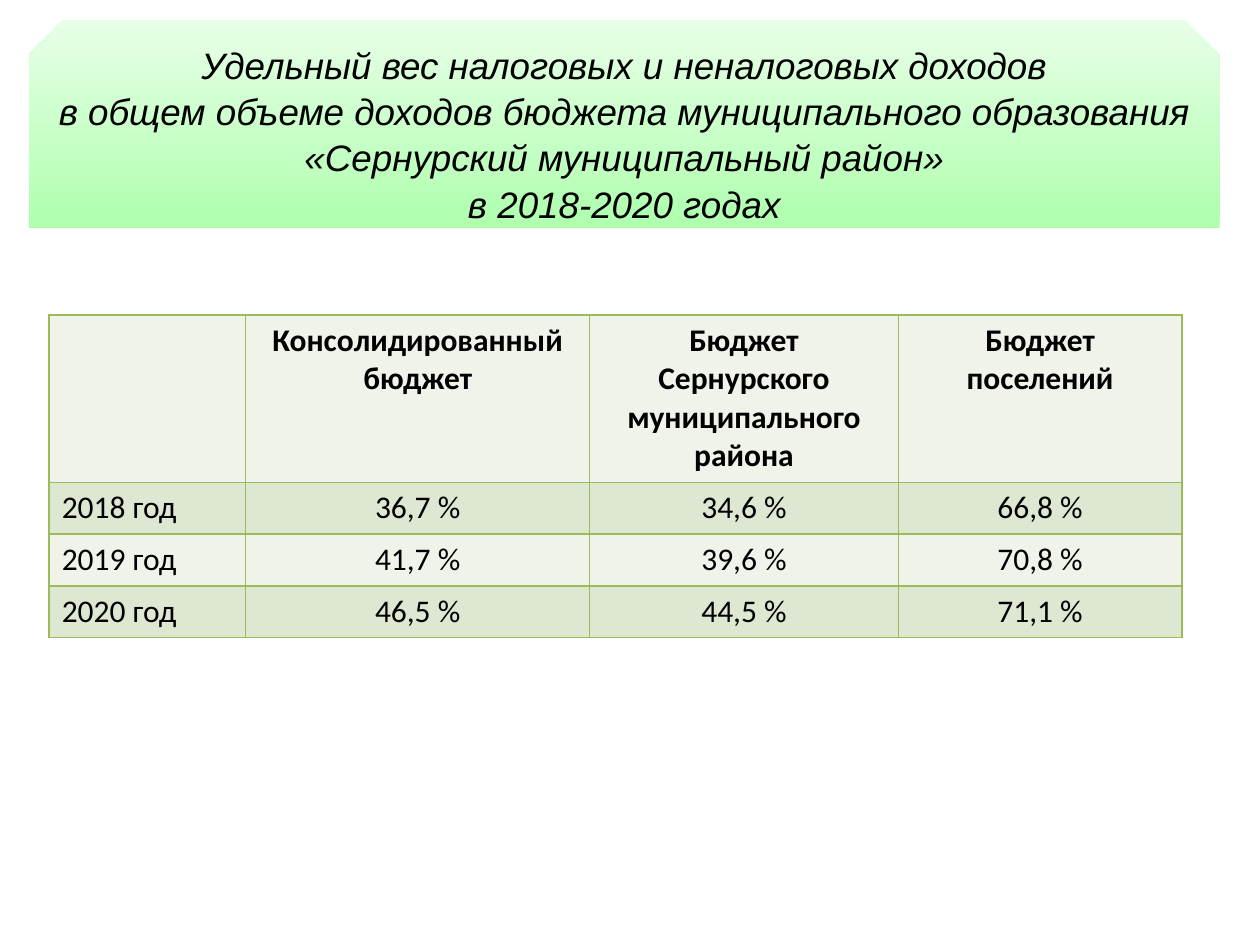
from lxml.etree import SubElement as Sub
from pptx import Presentation as Deck
from pptx.dml.color import RGBColor
from pptx.enum.shapes import MSO_SHAPE as Kind
from pptx.enum.text import MSO_ANCHOR as Anchor, MSO_AUTO_SIZE as Fit, PP_ALIGN as Align
from pptx.oxml.ns import qn
from pptx.util import Inches, Pt

TITLE = [
    "Удельный вес налоговых и неналоговых доходов",
    "в общем объеме доходов бюджета муниципального образования",
    "«Сернурский муниципальный район»",
    "в 2018-2020 годах",
]
ROWS = [
    ["", "Консолидированный бюджет",
     "Бюджет Сернурского муниципального района", "Бюджет поселений"],
    ["2018 год", "36,7 %", "34,6 %", "66,8 %"],
    ["2019 год", "41,7 %", "39,6 %", "70,8 %"],
    ["2020 год", "46,5 %", "44,5 %", "71,1 %"],
]
WIDTHS = [1.56, 2.73, 2.45, 2.25]
HEIGHTS = [1.33, 0.41, 0.41, 0.41]
BANDS = ["EFF3EA", "DEE7D1"]
EDGE = "9BBB59"


def color(code):
    """Turn a hex string into a colour."""
    return RGBColor.from_string(code)


def apply(item, style):
    """Set each attribute named in the style."""
    for name, value in style.items():
        setattr(item, name, value)


def write(frame, text, align, font, gap=None):
    """Fill a text frame and format each paragraph."""
    frame.text = text
    for para in frame.paragraphs:
        apply(para, {"alignment": align, "line_spacing": gap})
        for run in para.runs:
            apply(run.font, font)
            run.font.color.rgb = color("000000")


def add_banner(slide):
    """Draw the snipped gradient banner behind the title."""
    box = [Inches(n) for n in (0.23, 0.16, 9.45, 1.65)]
    banner = slide.shapes.add_shape(Kind.SNIP_2_SAME_RECTANGLE, *box)
    banner.shadow.inherit = False
    banner.line.fill.background()
    banner.fill.gradient()
    banner.fill.gradient_angle = 90
    for stop, code in zip(banner.fill.gradient_stops, ("AFFFAF", "E7FFE7")):
        stop.color.rgb = color(code)
    slide.shapes.title._element.addprevious(banner._element)


def set_title(slide):
    """Place and format the title over the banner."""
    title = slide.shapes.title
    apply(title, {"left": Inches(0.23), "top": Inches(0.3),
                  "width": Inches(9.45), "height": Inches(1.51)})
    apply(title.text_frame, {"word_wrap": True, "auto_size": Fit.NONE,
                             "vertical_anchor": Anchor.MIDDLE})
    font = {"name": "Arial", "size": Pt(21), "italic": True, "bold": False}
    write(title.text_frame, "\n".join(TITLE), Align.CENTER, font, 1.05)


def add_edges(cell):
    """Put a thin line on all four sides of a cell."""
    props = cell._tc.get_or_add_tcPr()
    for place, side in enumerate(("lnL", "lnR", "lnT", "lnB")):
        line = Sub(props, qn(f"a:{side}"), w=str(Pt(1)))
        fill = Sub(line, qn("a:solidFill"))
        Sub(fill, qn("a:srgbClr"), val=EDGE)
        props.insert(place, line)


def add_grid(slide):
    """Build the table of revenue shares."""
    box = [Inches(n) for n in (0.39, 2.5, sum(WIDTHS), sum(HEIGHTS))]
    grid = slide.shapes.add_table(len(ROWS), len(WIDTHS), *box).table
    for col, width in zip(grid.columns, WIDTHS):
        col.width = Inches(width)
    for i, (row, height) in enumerate(zip(grid.rows, HEIGHTS)):
        row.height = Inches(height)
        font = {"name": "Calibri", "size": Pt(18), "bold": i == 0}
        for j, cell in enumerate(row.cells):
            cell.fill.solid()
            cell.fill.fore_color.rgb = color(BANDS[i % 2])
            add_edges(cell)
            align = Align.CENTER if j else Align.LEFT
            write(cell.text_frame, ROWS[i][j], align, font)


def main():
    """Build the slide and save it."""
    deck = Deck()
    apply(deck, {"slide_width": Inches(10), "slide_height": Inches(7.5)})
    slide = deck.slides.add_slide(deck.slide_layouts[5])
    add_grid(slide)
    add_banner(slide)
    set_title(slide)
    deck.save("out.pptx")


if __name__ == "__main__":
    main()
